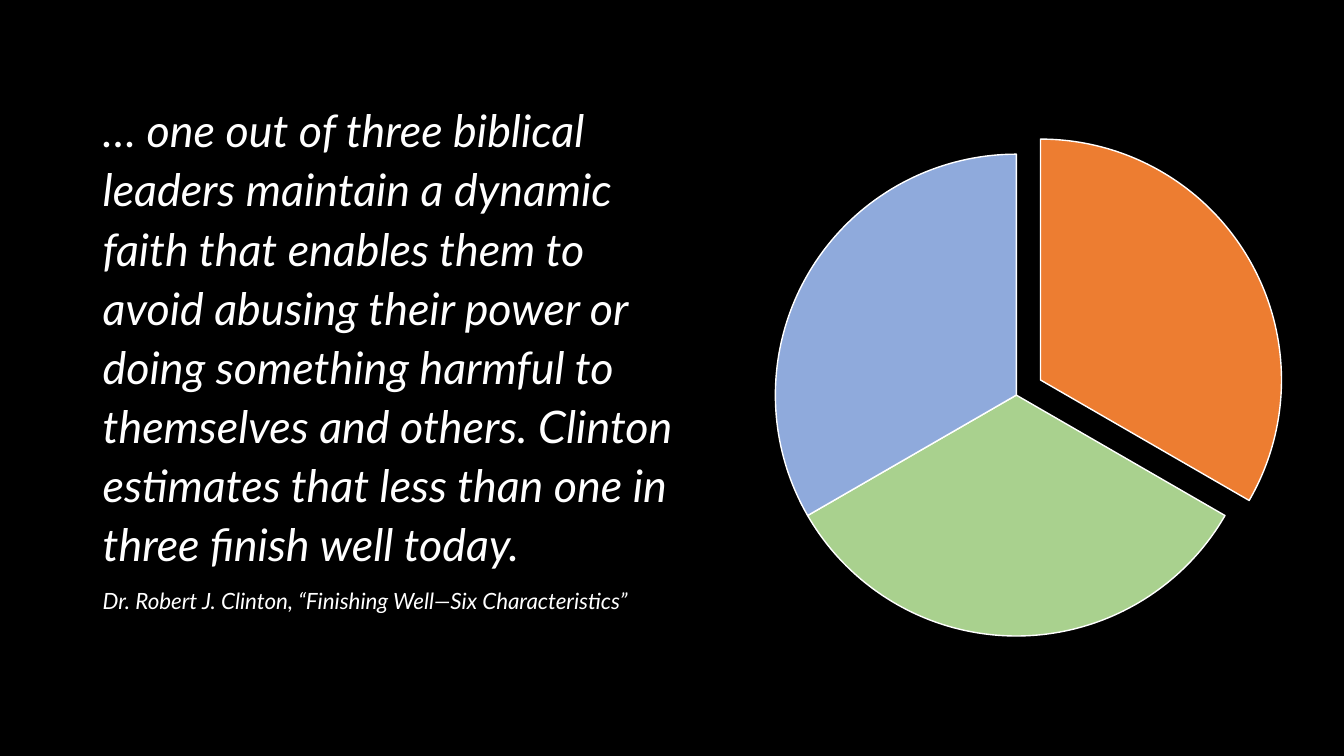
"""Build a slide with a quotation beside a three-part pie with one slice pulled out."""
from pptx import Presentation
from pptx.dml.color import RGBColor
from pptx.enum.shapes import MSO_SHAPE as Shape
from pptx.enum.text import MSO_ANCHOR as Anchor
from pptx.util import Inches, Pt

COLORS = {
    "background": "000000",
    "white": "FFFFFF",
    "orange": "ED7D31",
    "green": "A9D18E",
    "blue": "8FAADC",
}
FONT = "Lato"
WIDTH, HEIGHT = 13.33, 7.5
PIE_SIZE = 4.78
PIE_LEFT, PIE_TOP = 7.69, 1.53
PULL_X, PULL_Y = 0.24, -0.15
SLICE_ANGLE = 120
START_ANGLE = 270
ADJUSTMENT_PER_DEGREE = 0.6

QUOTE = (
    "… one out of three biblical leaders maintain a dynamic faith that enables "
    "them to avoid abusing their power or doing something harmful to themselves "
    "and others. Clinton estimates that less than one in three finish well today."
)
SOURCE = "Dr. Robert J. Clinton, “Finishing Well—Six Characteristics”"


def color(name):
    """Return the named colour."""
    return RGBColor.from_string(COLORS[name])


def write(paragraph, text, size, fill="white", italic=True):
    """Put formatted text in a paragraph."""
    paragraph.line_spacing = 1.1
    paragraph.space_before = Pt(10)
    run = paragraph.add_run()
    run.text = text
    run.font.name = FONT
    run.font.size = Pt(size)
    run.font.italic = italic
    run.font.color.rgb = color(fill)


def add_quotation(slide):
    """Add the quotation and its source."""
    box = slide.shapes.add_textbox(Inches(0.92), Inches(0.92), Inches(5.92), Inches(5.83))
    frame = box.text_frame
    frame.word_wrap = True
    frame.vertical_anchor = Anchor.TOP
    write(frame.paragraphs[0], QUOTE, size=32)
    write(frame.add_paragraph(), SOURCE, size=16)


def add_slice(group, index, fill, pulled=False):
    """Add one third of the pie, counted clockwise from the top."""
    left = PIE_LEFT + PULL_X * pulled
    top = PIE_TOP + PULL_Y * pulled
    shape = group.shapes.add_shape(
        Shape.PIE, Inches(left), Inches(top), Inches(PIE_SIZE), Inches(PIE_SIZE)
    )
    for position in range(2):
        angle = (START_ANGLE + (index + position) * SLICE_ANGLE) % 360
        shape.adjustments[position] = angle * ADJUSTMENT_PER_DEGREE
    shape.shadow.inherit = False
    shape.fill.solid()
    shape.fill.fore_color.rgb = color(fill)
    shape.line.color.rgb = color("white")
    shape.line.width = Pt(1)


def main():
    """Build and save the presentation."""
    presentation = Presentation()
    presentation.slide_width = Inches(WIDTH)
    presentation.slide_height = Inches(HEIGHT)
    slide = presentation.slides.add_slide(presentation.slide_layouts[6])
    slide.background.fill.solid()
    slide.background.fill.fore_color.rgb = color("background")
    add_quotation(slide)
    pie = slide.shapes.add_group_shape()
    for index, fill in enumerate(("orange", "green", "blue")):
        add_slice(pie, index, fill, pulled=index == 0)
    presentation.save("out.pptx")


if __name__ == "__main__":
    main()
